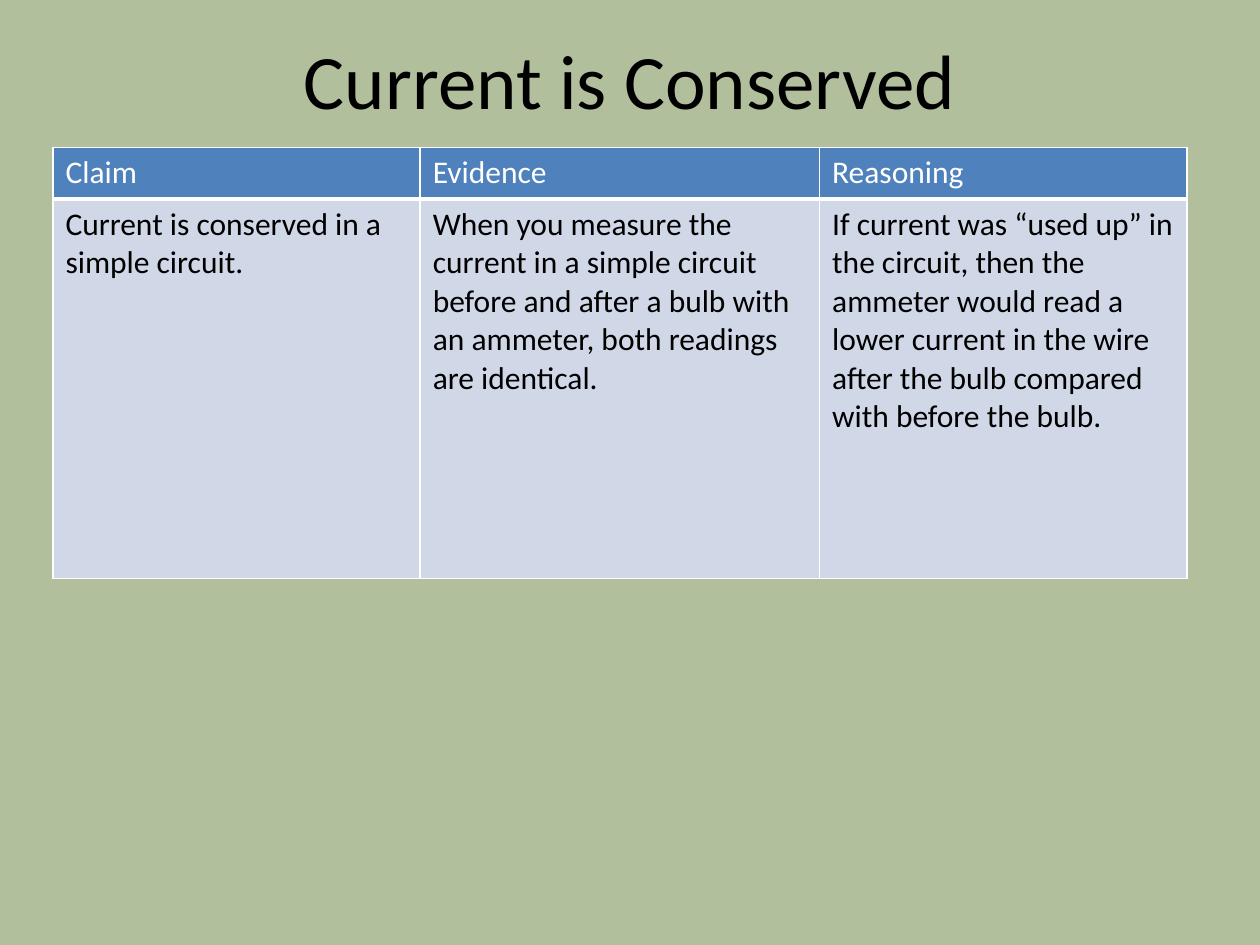
from lxml.etree import SubElement
from pptx import Presentation
from pptx.dml.color import RGBColor
from pptx.enum.text import MSO_ANCHOR, PP_ALIGN
from pptx.oxml.ns import qn
from pptx.util import Inches, Pt

HEADINGS = ["Claim", "Evidence", "Reasoning"]
STATEMENTS = [
    "Current is conserved in a simple circuit.",
    "When you measure the current in a simple circuit before and after a bulb "
    "with an ammeter, both readings are identical.",
    "If current was “used up” in the circuit, then the ammeter would read a "
    "lower current in the wire after the bulb compared with before the bulb.",
]


def color(value):
    return RGBColor.from_string(value)


def set_text(frame, text, size=18, fill="000000", align=PP_ALIGN.LEFT):
    frame.word_wrap = True
    paragraph = frame.paragraphs[0]
    paragraph.alignment = align
    run = paragraph.add_run()
    run.text = text
    run.font.name = "Calibri"
    run.font.size = Pt(size)
    run.font.color.rgb = color(fill)


def set_borders(cell, bottom=1):
    properties = cell._tc.get_or_add_tcPr()
    widths = {"a:lnL": 1, "a:lnR": 1, "a:lnT": 1, "a:lnB": bottom}
    for index, (tag, width) in enumerate(widths.items()):
        line = SubElement(properties, qn(tag), w=str(Pt(width)))
        SubElement(SubElement(line, qn("a:solidFill")), qn("a:srgbClr"), val="FFFFFF")
        properties.insert(index, line)


def add_title(slide, text, left, top, width, height):
    title = slide.shapes.title
    title.left, title.top = Inches(left), Inches(top)
    title.width, title.height = Inches(width), Inches(height)
    title.text_frame.vertical_anchor = MSO_ANCHOR.MIDDLE
    set_text(title.text_frame, text, size=44, align=PP_ALIGN.CENTER)


def add_argument_table(slide, left, top, width, height):
    table = slide.shapes.add_table(
        2, len(HEADINGS), Inches(left), Inches(top), Inches(width), Inches(height)
    ).table
    middle_width, header_height = 3.17, 0.41
    side_width = (width - middle_width) / 2
    for column, column_width in zip(table.columns, [side_width, middle_width, side_width]):
        column.width = Inches(column_width)
    table.rows[0].height = Inches(header_height)
    table.rows[1].height = Inches(height - header_height)

    styles = [(HEADINGS, "4F81BD", "FFFFFF", 3), (STATEMENTS, "D0D8E8", "000000", 1)]
    for row, (texts, background, text_color, bottom) in zip(table.rows, styles):
        for cell, text in zip(row.cells, texts):
            cell.fill.solid()
            cell.fill.fore_color.rgb = color(background)
            set_borders(cell, bottom=bottom)
            set_text(cell.text_frame, text, fill=text_color)


def main():
    presentation = Presentation()
    presentation.slide_width, presentation.slide_height = Inches(10), Inches(7.5)
    slide = presentation.slides.add_slide(presentation.slide_layouts[5])
    slide.background.fill.solid()
    slide.background.fill.fore_color.rgb = color("B2BF9D")
    add_title(slide, "Current is Conserved", 0.5, 0, 9, 1.25)
    add_argument_table(slide, 0.42, 1.17, 9, 3.42)
    presentation.save("out.pptx")


if __name__ == "__main__":
    main()
